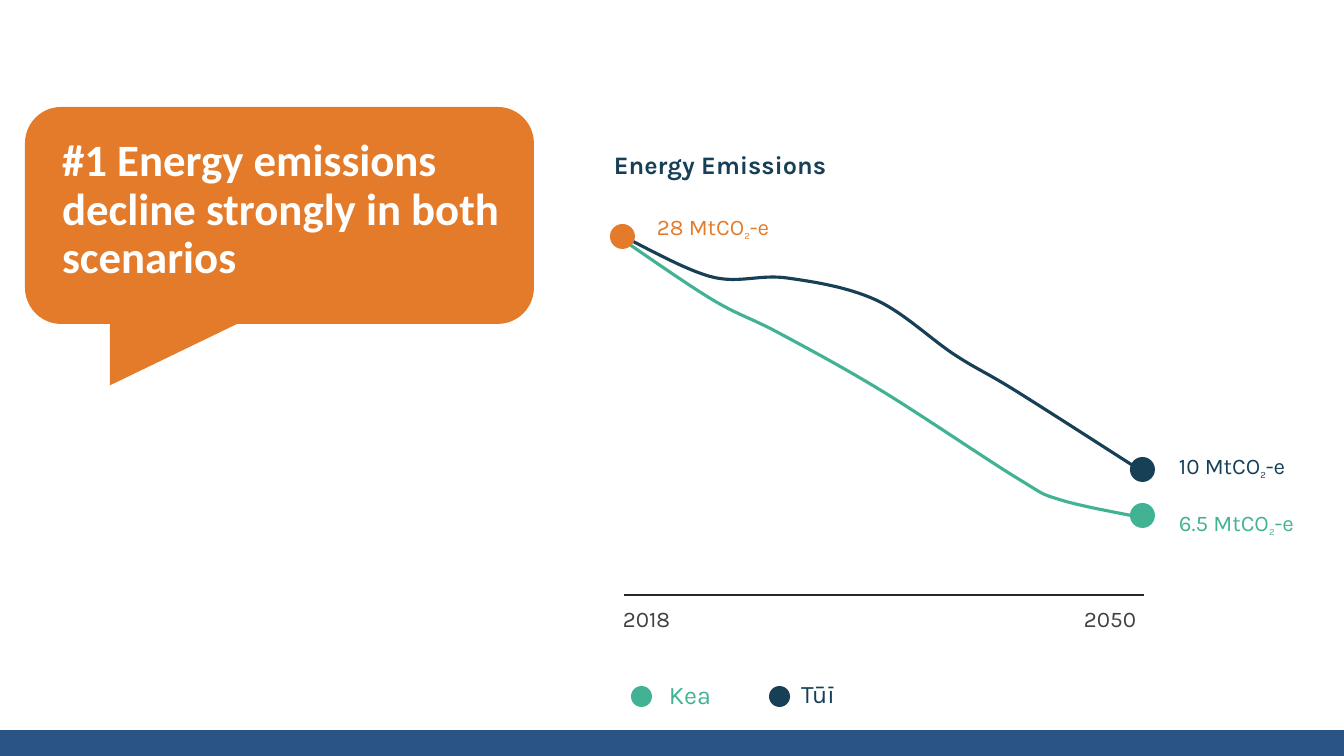
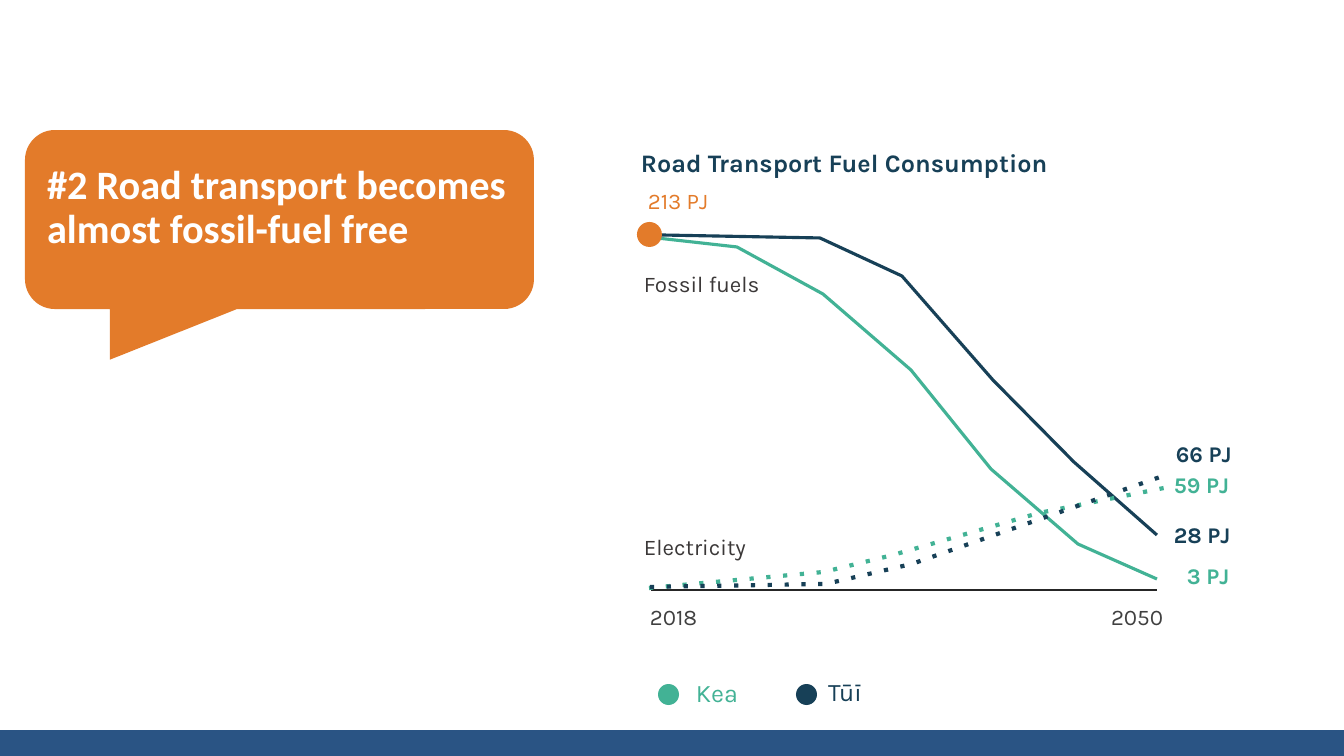
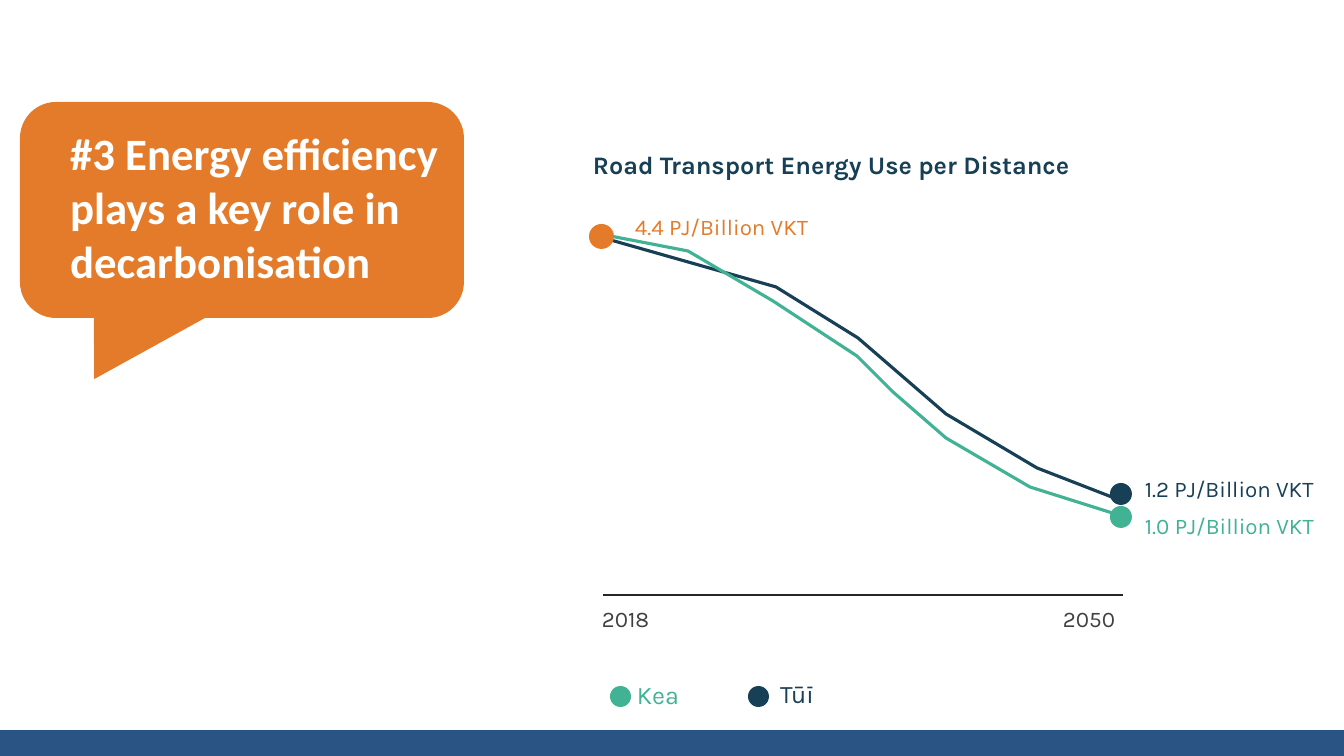
from lxml import etree
from pptx import Presentation
from pptx import util as u
from pptx.dml import color as dml
from pptx.enum import shapes, text
from pptx.oxml import ns

SCALE = 914400 / 100.8
WIDTH, HEIGHT = 1344, 756
BAND_HEIGHT = 26
LABEL_WIDTH, LABEL_HEIGHT = 205, 40
START_DOT = 25
LEGEND_DOT = 21

COLORS = {
    "band": "2A5484",
    "orange": "E37B2A",
    "kea": "42B295",
    "tui": "174057",
    "year": "404040",
    "note": "3B3838",
    "axis": "262626",
    "white": "FFFFFF",
}
LEFT, CENTER, RIGHT = text.PP_ALIGN.LEFT, text.PP_ALIGN.CENTER, text.PP_ALIGN.RIGHT


def px(value):
    return u.Emu(round(value * SCALE))


def box(*values):
    return [px(value) for value in values]


def rgb(name):
    return dml.RGBColor.from_string(COLORS[name])


def add_run(paragraph, content, size, color, bold=False, font="Karla"):
    run = paragraph.add_run()
    run.text = content
    run.font.name = font
    run.font.size = u.Pt(size)
    run.font.bold = bold
    run.font.color.rgb = rgb(color)
    return run


def add_solid(slide, kind, left, top, width, height, color):
    shape = slide.shapes.add_shape(kind, *box(left, top, width, height))
    shape.shadow.inherit = False
    shape.fill.solid()
    shape.fill.fore_color.rgb = rgb(color)
    shape.line.fill.background()
    return shape


def add_dot(slide, left, top, size, color):
    add_solid(slide, shapes.MSO_SHAPE.OVAL, left, top, size, size, color)


def add_label(slide, left, top, parts, color, size=16, bold=False,
              width=LABEL_WIDTH, align=LEFT):
    width = min(width, WIDTH - left)
    label = slide.shapes.add_textbox(*box(left, top, width, LABEL_HEIGHT))
    label.text_frame.word_wrap = True
    paragraph = label.text_frame.paragraphs[0]
    paragraph.alignment = align
    for index, part in enumerate(parts):
        subscript = index % 2 == 1
        run = add_run(paragraph, part, 12 if subscript else size, color, bold)
        if subscript:
            run._r.get_or_add_rPr().set("baseline", "-25000")


def add_axis(slide, left, right, top):
    axis = slide.shapes.add_connector(
        shapes.MSO_CONNECTOR.STRAIGHT, *box(left, top, right, top))
    axis.line.color.rgb = rgb("axis")
    axis.line.width = u.Pt(1)
    etree.SubElement(axis.element.spPr, ns.qn("a:effectLst"))


def smooth(series):
    knots = [(int(point.get("x")), int(point.get("y")))
             for point in series.element.iter(ns.qn("a:pt"))]
    padded = [knots[0], *knots, knots[-1]]
    segments = list(series.element.iter(ns.qn("a:lnTo")))
    for segment, before, start, end, after in zip(
            segments, padded, padded[1:], padded[2:], padded[3:]):
        segment.tag = ns.qn("a:cubicBezTo")
        controls = (
            [s + (e - b) / 6 for b, s, e in zip(before, start, end)],
            [e - (a - s) / 6 for s, e, a in zip(start, end, after)])
        for index, (x, y) in enumerate(controls):
            point = etree.Element(ns.qn("a:pt"), x=str(round(x)), y=str(round(y)))
            segment.insert(index, point)


def add_series(slide, points, color, dotted=False):
    start, *others = [box(*point) for point in points]
    builder = slide.shapes.build_freeform(*start)
    builder.add_line_segments(others, close=False)
    series = builder.convert_to_shape()
    series.shadow.inherit = False
    series.fill.background()
    series.line.color.rgb = rgb(color)
    series.line.width = u.Pt(3 if dotted else 2.25)
    if dotted:
        outline = series.element.spPr.find(ns.qn("a:ln"))
        etree.SubElement(outline, ns.qn("a:prstDash")).set("val", "dot")
    return series


def add_headline(slide, content, callout, title_box, size=32, spacing=0.9):
    bubble = add_solid(
        slide, shapes.MSO_SHAPE.ROUNDED_RECTANGULAR_CALLOUT, *callout, "orange")
    for index, value in enumerate((-0.333, 0.783, 0.167)):
        bubble.adjustments[index] = value
    title = slide.shapes.title
    slide.shapes.element.append(title.element)
    title.left, title.top, title.width, title.height = box(*title_box)
    frame = title.text_frame
    frame.word_wrap = True
    frame.auto_size = text.MSO_AUTO_SIZE.NONE
    frame.vertical_anchor = text.MSO_ANCHOR.TOP
    paragraph = frame.paragraphs[0]
    paragraph.alignment = LEFT
    paragraph.line_spacing = spacing
    add_run(paragraph, content, size, "white", True, "Calibri")


def add_graph_frame(slide, title, left, title_width, shift=0, axis_top=595,
                    axis_width=520, kea_center=66):
    add_label(slide, left - 20, 144 + shift, [title], "tui", 18, True, title_width)
    add_axis(slide, left, left + axis_width, axis_top)
    add_label(slide, left - 11, 600 + shift, ["2018"], "year", width=287)
    add_label(slide, left + 420, 600 + shift, ["2050"], "year", width=102, align=RIGHT)
    for name, color, dot, center, top, width in (
            ("Kea", "kea", 7, kea_center, 674, 120),
            ("Tūī", "tui", 145, 194, 673, 126)):
        add_dot(slide, left + dot, 686 + shift, LEGEND_DOT, color)
        add_label(slide, left + center - width // 2, top + shift, [name], color, 18,
                  width=width, align=CENTER)


def add_start_dot(slide, left, shift=0):
    add_dot(slide, left - 14, 224 + shift, START_DOT, "orange")


def add_emissions(slide):
    left = 624
    add_headline(slide, "#1 Energy emissions decline strongly in both scenarios",
                 (25, 107, 509, 217), (52, 133, 461, 171))
    add_graph_frame(slide, "Energy Emissions", left, 437)
    for color, points in (
            ("tui", [(624, 237), (712, 277), (787, 278), (876, 300), (955, 355),
                     (1016, 391), (1143, 472)]),
            ("kea", [(623, 240), (713, 300), (779, 333), (882, 391), (1017, 478),
                     (1061, 500), (1144, 518)])):
        smooth(add_series(slide, points, color))
    add_start_dot(slide, left)
    for top, color in ((457, "tui"), (503, "kea")):
        add_dot(slide, 1130, top, 25, color)
    for x, y, amount, color in (
            (647, 208, "28", "orange"), (1169, 447, "10", "tui"),
            (1169, 504, "6.5", "kea")):
        add_label(slide, x, y, [f"{amount} MtCO", "2", "-e"], color)


def add_fuel(slide):
    left, shift = 651, -2
    add_headline(slide, "#2 Road transport becomes almost fossil-fuel free",
                 (25, 130, 509, 179), (37, 160, 485, 129), size=28.8)
    add_graph_frame(slide, "Road Transport Fuel Consumption", left, 480, shift,
                    axis_top=590, axis_width=506)
    for color, dotted, points in (
            ("tui", False, [(661, 235), (820, 238), (902, 276), (993, 380),
                            (1074, 462), (1157, 535)]),
            ("kea", False, [(657, 238), (737, 247), (823, 294), (911, 370),
                            (991, 469), (1078, 544), (1157, 579)]),
            ("kea", True, [(649, 588), (824, 572), (893, 555), (1039, 513),
                           (1164, 488)]),
            ("tui", True, [(650, 587), (826, 584), (912, 564), (1166, 475)])):
        add_series(slide, points, color, dotted)
    add_start_dot(slide, left, shift)
    add_label(slide, 638, 182, ["213 PJ"], "orange")
    for top, fuel in ((265, "Fossil fuels"), (528, "Electricity")):
        add_label(slide, 634, top, [fuel], "note")
    for x, y, amount, color in (
            (1166, 435, "66 PJ", "tui"), (1164, 466, "59 PJ", "kea"),
            (1164, 516, "28 PJ", "tui"), (1177, 557, "3 PJ", "kea")):
        add_label(slide, x, y, [amount], color, bold=True)


def add_efficiency(slide):
    left = 603
    add_headline(slide, "#3 Energy efficiency plays a key role in decarbonisation",
                 (20, 102, 444, 216), (60, 121, 402, 376), spacing=1.0)
    add_graph_frame(slide, "Road Transport Energy Use per Distance", left, 637,
                    kea_center=55)
    for color, points in (
            ("tui", [(607, 239), (776, 287), (858, 338), (946, 414), (1037, 468),
                     (1122, 501)]),
            ("kea", [(605, 235), (688, 251), (773, 301), (857, 356), (893, 392),
                     (946, 438), (1030, 487), (1125, 517)])):
        add_series(slide, points, color)
    add_start_dot(slide, left)
    for top, color in ((483, "tui"), (506, "kea")):
        add_dot(slide, 1110, top, 22, color)
    for x, y, amount, color in (
            (625, 208, "4.4", "orange"), (1135, 470, "1.2", "tui"),
            (1135, 507, "1.0", "kea")):
        add_label(slide, x, y, [f"{amount} PJ/Billion VKT"], color)


def add_layout_band(layout, slide):
    band = add_solid(slide, shapes.MSO_SHAPE.RECTANGLE, 0, HEIGHT - BAND_HEIGHT,
                     WIDTH, BAND_HEIGHT, "band")
    layout.shapes.element.insert(2, band.element)


def main():
    presentation = Presentation()
    presentation.slide_width, presentation.slide_height = box(WIDTH, HEIGHT)
    layout = presentation.slide_layouts[5]
    for index, fill_slide in enumerate((add_emissions, add_fuel, add_efficiency)):
        slide = presentation.slides.add_slide(layout)
        if index == 0:
            add_layout_band(layout, slide)
        fill_slide(slide)
    presentation.save("out.pptx")


if __name__ == "__main__":
    main()
